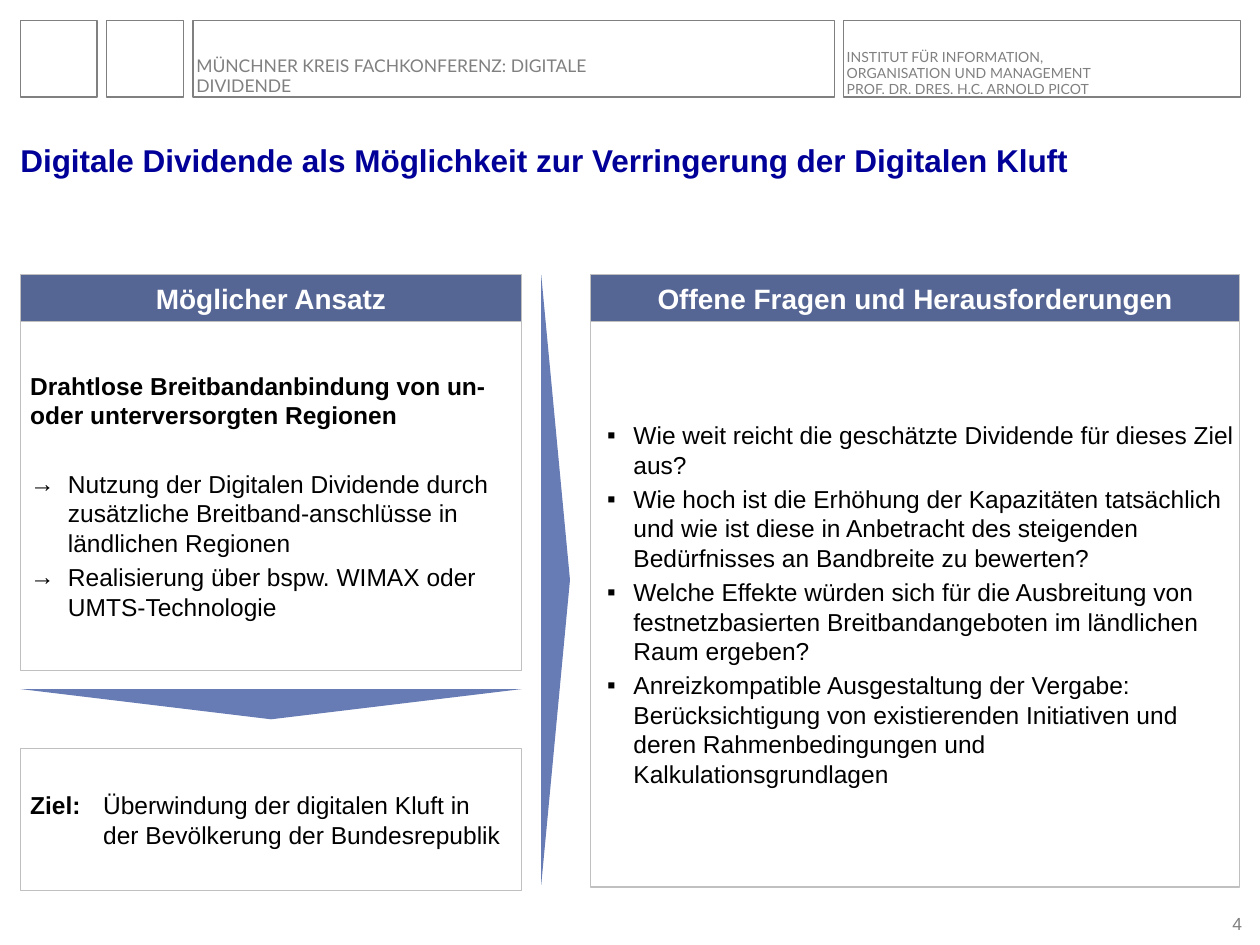
from lxml.etree import SubElement
from pptx import Presentation
from pptx.dml.color import RGBColor
from pptx.enum.shapes import MSO_SHAPE as Shape
from pptx.enum.text import MSO_ANCHOR as Anchor, PP_ALIGN as Align
from pptx.oxml.ns import qn
from pptx.util import Cm, Pt

WHITE = RGBColor(0xFF, 0xFF, 0xFF)
BLACK = RGBColor(0x00, 0x00, 0x00)
GREY = RGBColor(0x80, 0x80, 0x80)
SILVER = RGBColor(0xC0, 0xC0, 0xC0)
NAVY = RGBColor(0x00, 0x00, 0x99)
SLATE = RGBColor(0x55, 0x65, 0x94)
BLUE = RGBColor(0x67, 0x7B, 0xB4)

MARGIN = 0.41
LEFT_WIDTH = 10.11
RIGHT_LEFT, RIGHT_WIDTH = 11.91, 13.08
HEADING_TOP, HEADING_HEIGHT = 5.54, 0.94
PANEL_TOP = HEADING_TOP + HEADING_HEIGHT
HEADER_HEIGHT, HEADER_GAP = 1.55, 0.19
HEADER_WIDTHS = [1.55, 1.55, 12.93, 8]

APPROACH = [
    "Drahtlose Breitbandanbindung von un- oder unterversorgten Regionen",
    "Nutzung der Digitalen Dividende durch zusätzliche Breitband-anschlüsse in ländlichen Regionen",
    "Realisierung über bspw. WIMAX oder UMTS-Technologie",
]
QUESTIONS = [
    "Wie weit reicht die geschätzte Dividende für dieses Ziel aus?",
    "Wie hoch ist die Erhöhung der Kapazitäten tatsächlich und wie ist diese in "
    "Anbetracht des steigenden Bedürfnisses an Bandbreite zu bewerten?",
    "Welche Effekte würden sich für die Ausbreitung von festnetzbasierten "
    "Breitbandangeboten im ländlichen Raum ergeben?",
    "Anreizkompatible Ausgestaltung der Vergabe: Berücksichtigung von existierenden "
    "Initiativen und deren Rahmenbedingungen und Kalkulationsgrundlagen",
]


def place(shape, left, top, width, height):
    shape.left, shape.top = Cm(left), Cm(top)
    shape.width, shape.height = Cm(width), Cm(height)


def set_frame(text_frame, inset, anchor, wrap=True):
    text_frame.word_wrap = wrap
    text_frame.vertical_anchor = anchor
    text_frame.margin_left = text_frame.margin_right = Cm(inset)
    text_frame.margin_top = text_frame.margin_bottom = Cm(inset)


def format_runs(paragraph, size, color, bold=False, name="Arial"):
    for run in paragraph.runs:
        run.font.name = name
        run.font.size = Pt(size)
        run.font.bold = bold
        run.font.color.rgb = color


def set_indent(paragraph, left, hanging):
    properties = paragraph._p.get_or_add_pPr()
    properties.set("marL", str(Cm(left)))
    properties.set("indent", str(-Cm(hanging)))
    return properties


def set_bullet(paragraph, character, hanging):
    properties = set_indent(paragraph, 0.76, hanging)
    color = SubElement(properties, qn("a:buClr"))
    SubElement(color, qn("a:srgbClr")).set("val", str(BLACK))
    SubElement(properties, qn("a:buFont")).set("typeface", "Arial")
    SubElement(properties, qn("a:buChar")).set("char", character)


def add_box(slide, left, top, width, height, fill=None, line=SILVER):
    shape = slide.shapes.add_shape(
        Shape.RECTANGLE, Cm(left), Cm(top), Cm(width), Cm(height))
    shape.shadow.inherit = False
    if fill is None:
        shape.fill.background()
    else:
        shape.fill.solid()
        shape.fill.fore_color.rgb = fill
    shape.line.color.rgb = line
    shape.line.width = Pt(0.75)
    return shape


def add_triangle(slide, left, top, width, height, rotation):
    shape = slide.shapes.add_shape(
        Shape.ISOSCELES_TRIANGLE, Cm(left), Cm(top), Cm(width), Cm(height))
    shape.shadow.inherit = False
    shape.fill.solid()
    shape.fill.fore_color.rgb = BLUE
    shape.line.fill.background()
    shape.rotation = rotation


def add_label(slide, left, top, width, height, text, size, name="Lato",
              spacing=0.95, align=Align.LEFT, wrap=True):
    box = slide.shapes.add_textbox(Cm(left), Cm(top), Cm(width), Cm(height))
    set_frame(box.text_frame, 0, Anchor.BOTTOM, wrap)
    box.text_frame.text = text
    for paragraph in box.text_frame.paragraphs:
        paragraph.line_spacing = spacing
        paragraph.alignment = align
        format_runs(paragraph, size, GREY, name=name)


def add_heading(slide, left, width, text):
    shape = add_box(slide, left, HEADING_TOP, width, HEADING_HEIGHT, SLATE)
    set_frame(shape.text_frame, 0.1, Anchor.MIDDLE, wrap=False)
    shape.text_frame.text = text
    paragraph = shape.text_frame.paragraphs[0]
    paragraph.alignment = Align.CENTER
    format_runs(paragraph, 16, WHITE, bold=True)


def add_panel(slide, left, top, width, height, texts, inset):
    shape = add_box(slide, left, top, width, height, WHITE)
    set_frame(shape.text_frame, inset, Anchor.MIDDLE)
    shape.text_frame.text = "\n".join(texts)
    for paragraph in shape.text_frame.paragraphs:
        paragraph.alignment = Align.LEFT
        paragraph.space_after = Pt(2.8)
        format_runs(paragraph, 14, BLACK)
    return shape.text_frame.paragraphs


def add_header(slide):
    left = MARGIN
    for width in HEADER_WIDTHS:
        add_box(slide, left, MARGIN, width, HEADER_HEIGHT, line=GREY)
        left += width + HEADER_GAP
    add_label(slide, 3.96, 0.91, 9.02, 1.04,
              "MÜNCHNER KREIS FACHKONFERENZ: DIGITALE DIVIDENDE", 10)
    add_label(slide, 17.07, 0.79, 6.6, 1.17,
              "INSTITUT FÜR INFORMATION,\vORGANISATION UND MANAGEMENT\n"
              "PROF. DR. DRES. H.C. ARNOLD PICOT", 8)


def add_title(slide, text):
    title = slide.shapes.title
    place(title, MARGIN, 2.13, 24.59, 1.47)
    set_frame(title.text_frame, 0, Anchor.BOTTOM)
    title.text_frame.text = text
    paragraph = title.text_frame.paragraphs[0]
    paragraph.alignment = Align.LEFT
    format_runs(paragraph, 18, NAVY, bold=True)


def add_approach(slide):
    lead, *measures = add_panel(
        slide, MARGIN, PANEL_TOP, LEFT_WIDTH, 7.04, APPROACH, 0.2)
    lead.space_after = Pt(22.4)
    format_runs(lead, 14, BLACK, bold=True)
    for paragraph in measures:
        set_bullet(paragraph, "→", 0.76)
    add_heading(slide, MARGIN, LEFT_WIDTH, "Möglicher Ansatz")


def add_questions(slide):
    for paragraph in add_panel(
            slide, RIGHT_LEFT, PANEL_TOP, RIGHT_WIDTH, 11.4, QUESTIONS, 0.1):
        set_bullet(paragraph, "▪", 0.53)
    add_heading(slide, RIGHT_LEFT, RIGHT_WIDTH, "Offene Fragen und Herausforderungen")


def add_goal(slide):
    paragraph = add_panel(
        slide, MARGIN, 15.09, LEFT_WIDTH, 2.87, ["Ziel:\t"], 0.2)[0]
    set_indent(paragraph, 1.47, 1.47)
    run = paragraph.add_run()
    run.text = "Überwindung der digitalen Kluft in der Bevölkerung der Bundesrepublik"
    format_runs(paragraph, 14, BLACK)
    paragraph.runs[0].font.bold = True


def main():
    presentation = Presentation()
    presentation.slide_width, presentation.slide_height = Cm(25.4), Cm(19.05)
    slide = presentation.slides.add_slide(presentation.slide_layouts[5])
    add_header(slide)
    add_title(slide, "Digitale Dividende als Möglichkeit zur Verringerung der Digitalen Kluft")
    add_label(slide, 24.33, 18.39, 0.71, 0.43, "4", 10, name="Arial",
              spacing=1, align=Align.RIGHT, wrap=False)
    add_approach(slide)
    add_questions(slide)
    add_triangle(slide, 5.05, 11.4, 12.3, 0.58, 90)
    add_goal(slide)
    add_triangle(slide, MARGIN, 13.89, LEFT_WIDTH, 0.61, 180)
    presentation.save("out.pptx")


if __name__ == "__main__":
    main()
